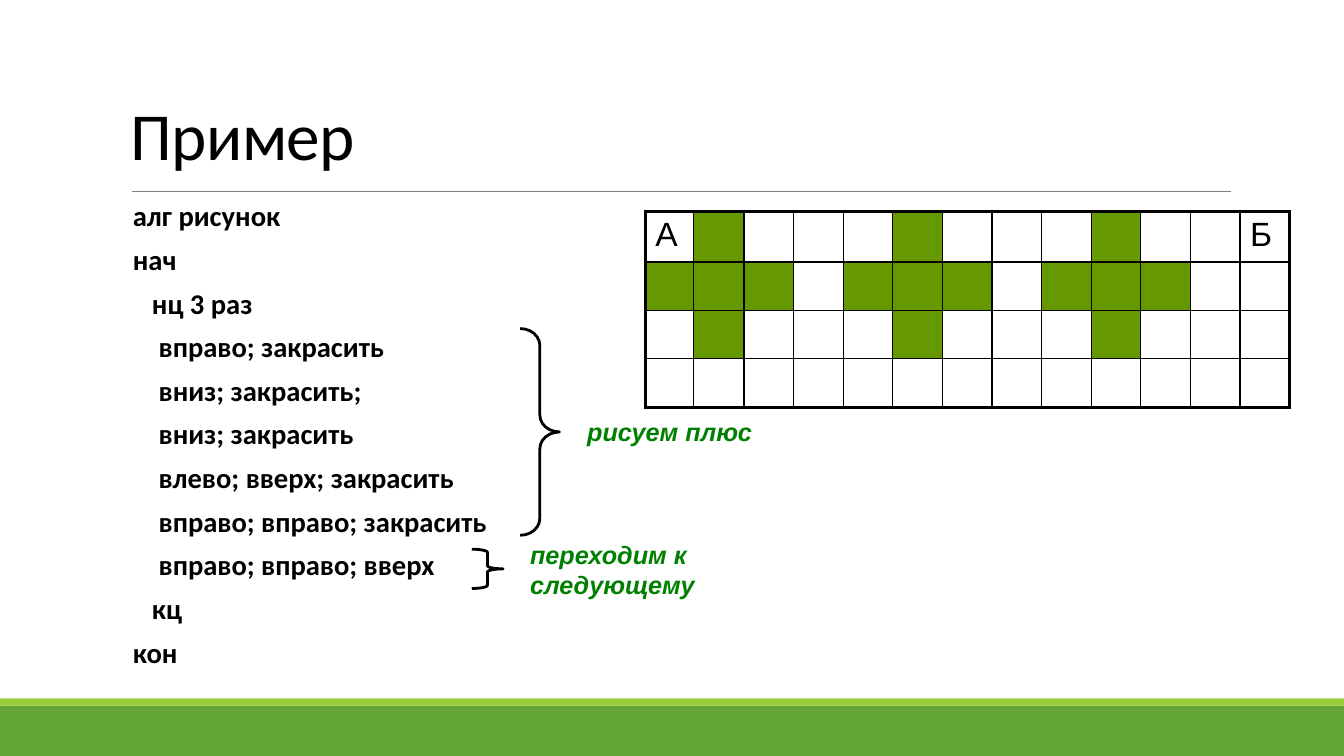
"""Builds the slide with a sample drawing algorithm and its grid of cells."""
from lxml.etree import SubElement
from pptx import Presentation
from pptx.dml.color import RGBColor
from pptx.enum.shapes import MSO_CONNECTOR, MSO_SHAPE
from pptx.enum.text import MSO_ANCHOR, MSO_AUTO_SIZE
from pptx.oxml.ns import qn
from pptx.util import Cm, Pt

BLACK = RGBColor(0x00, 0x00, 0x00)
GRAY = RGBColor(0x80, 0x80, 0x80)
BAND_GREEN = RGBColor(0x63, 0xA5, 0x37)
STRIPE_GREEN = RGBColor(0x99, 0xCB, 0x38)
CELL_GREEN = RGBColor(0x66, 0x99, 0x00)
NOTE_GREEN = RGBColor(0x00, 0x80, 0x00)

TITLE_FONT = {"name": "Calibri", "size": Pt(48), "bold": False}
CODE_FONT = {"name": "Calibri", "size": Pt(20.4), "bold": True}
NOTE_FONT = {"name": "Arial", "size": Pt(18), "bold": True, "italic": True}
CELL_FONT = {"name": "Arial", "size": Pt(24)}
TITLE_SPACING = {"line_spacing": 0.85}
CODE_SPACING = {"line_spacing": 0.7, "space_before": Pt(12), "space_after": Pt(2)}
TITLE_FRAME = {"vertical_anchor": MSO_ANCHOR.BOTTOM}
CODE_FRAME = {"margin_left": 0, "margin_right": 0}
NOTE_FRAME = {"auto_size": MSO_AUTO_SIZE.SHAPE_TO_FIT_TEXT}

LEVEL_INDENTS = (0, 0.48, 0.65)
PROGRAM = (
    (0, "алг рисунок"),
    (0, "нач"),
    (1, "нц 3 раз"),
    (2, "вправо; закрасить"),
    (2, "вниз; закрасить;"),
    (2, "вниз; закрасить"),
    (2, "влево; вверх; закрасить"),
    (2, "вправо; вправо; закрасить"),
    (2, "вправо; вправо; вверх"),
    (1, "кц"),
    (0, "кон"),
)
COLUMN_WIDTHS = [1.22, 1.27] + [1.25] * 11
ROW_HEIGHTS = [1.27] + [1.22] * 3
PLUS_ROW = 1
PLUS_COLUMNS = (1, 5, 9)
CELL_MARKS = {(0, 0): "А", (0, 12): "Б"}


def apply_format(target, values):
    """Set every named attribute of the target."""
    for name, value in values.items():
        setattr(target, name, value)


class SlideBuilder:
    """Holds the slide and draws each kind of element on it."""

    def __init__(self, slide):
        """Keep the current slide and its border widths."""
        self.shapes = slide.shapes
        self.inner_border = Pt(1)
        self.outer_border = Pt(2.25)

    def band(self, box, color):
        """Draw a plain filled rectangle."""
        band = self.shapes.add_shape(MSO_SHAPE.RECTANGLE, *map(Cm, box))
        band.shadow.inherit = False
        band.fill.solid()
        band.fill.fore_color.rgb = color
        band.line.fill.background()

    def rule(self, start, end):
        """Draw the thin line under the title."""
        rule = self.shapes.add_connector(MSO_CONNECTOR.STRAIGHT, *map(Cm, start + end))
        rule.line.color.rgb = GRAY
        rule.line.width = Pt(0.5)
        SubElement(rule._element.spPr, qn("a:effectLst"))

    def brace(self, box, curl):
        """Draw a right brace with the given curl."""
        brace = self.shapes.add_shape(MSO_SHAPE.RIGHT_BRACE, *map(Cm, box))
        brace.shadow.inherit = False
        brace.adjustments[0] = curl
        brace.fill.background()
        brace.line.color.rgb = BLACK
        brace.line.width = Pt(2)

    def text(self, box, lines, font, color, frame_format, spacing, tracking=0):
        """Write indented lines in one text box."""
        frame = self.shapes.add_textbox(*map(Cm, box)).text_frame
        frame.word_wrap = True
        apply_format(frame, frame_format)
        for number, (level, words) in enumerate(lines):
            paragraph = frame.add_paragraph() if number else frame.paragraphs[0]
            apply_format(paragraph, spacing)
            paragraph._p.get_or_add_pPr().set("marL", str(Cm(LEVEL_INDENTS[level])))
            run = paragraph.add_run()
            run.text = words
            apply_format(run.font, font)
            run.font.color.rgb = color
            if tracking:
                run._r.get_or_add_rPr().set("spc", str(tracking))

    def border(self, cell, side, width):
        """Draw one black side of a cell."""
        edge = SubElement(cell._tc.get_or_add_tcPr(), qn(f"a:ln{side}"), w=str(width))
        fill = SubElement(edge, qn("a:solidFill"))
        SubElement(fill, qn("a:srgbClr"), val=str(BLACK))

    def grid(self, left, top):
        """Draw the field with its painted pluses and marked corners."""
        last_row, last_column = len(ROW_HEIGHTS) - 1, len(COLUMN_WIDTHS) - 1
        field = self.shapes.add_table(
            last_row + 1, last_column + 1, Cm(left), Cm(top),
            Cm(sum(COLUMN_WIDTHS)), Cm(sum(ROW_HEIGHTS)),
        ).table
        apply_format(field, {"first_row": False, "horz_banding": False})
        for column, width in zip(field.columns, COLUMN_WIDTHS):
            column.width = Cm(width)
        for row, height in zip(field.rows, ROW_HEIGHTS):
            row.height = Cm(height)
        for r in range(last_row + 1):
            for c in range(last_column + 1):
                cell = field.cell(r, c)
                outer = {"L": c == 0, "R": c == last_column, "T": r == 0, "B": r == last_row}
                for side, is_outer in outer.items():
                    self.border(cell, side, self.outer_border if is_outer else self.inner_border)
                if any(abs(r - PLUS_ROW) + abs(c - center) <= 1 for center in PLUS_COLUMNS):
                    cell.fill.solid()
                    cell.fill.fore_color.rgb = CELL_GREEN
                else:
                    cell.fill.background()
                if (r, c) in CELL_MARKS:
                    mark = cell.text_frame.paragraphs[0].add_run()
                    mark.text = CELL_MARKS[r, c]
                    apply_format(mark.font, CELL_FONT)
                    mark.font.color.rgb = BLACK


def main():
    """Build and save the presentation."""
    presentation = Presentation()
    apply_format(presentation, {"slide_width": Cm(33.87), "slide_height": Cm(19.05)})
    builder = SlideBuilder(presentation.slides.add_slide(presentation.slide_layouts[6]))
    builder.band((0, 17.78, 33.87, 1.27), BAND_GREEN)
    builder.band((0, 17.6, 33.87, 0.18), STRIPE_GREEN)
    builder.rule((3.33, 4.82), (31.01, 4.82))
    builder.grid(16.26, 5.33)
    builder.text((3.05, 0.48, 27.94, 4.04), [(0, "Пример")], TITLE_FONT, BLACK,
                 TITLE_FRAME, TITLE_SPACING, tracking=-50)
    builder.text((3.35, 5.11, 13.67, 12.4), PROGRAM, CODE_FONT, BLACK,
                 CODE_FRAME, CODE_SPACING)
    builder.brace((13.11, 8.28, 0.99, 5.21), 0.43)
    builder.brace((11.89, 13.84, 0.79, 0.99), 0.1)
    for box, note in (
        ((14.55, 10.36, 5.59, 1.02), "рисуем плюс"),
        ((13.11, 13.46, 5, 1.78), "переходим к следующему"),
    ):
        builder.text(box, [(0, note)], NOTE_FONT, NOTE_GREEN, NOTE_FRAME, {})
    presentation.save("out.pptx")


if __name__ == "__main__":
    main()
